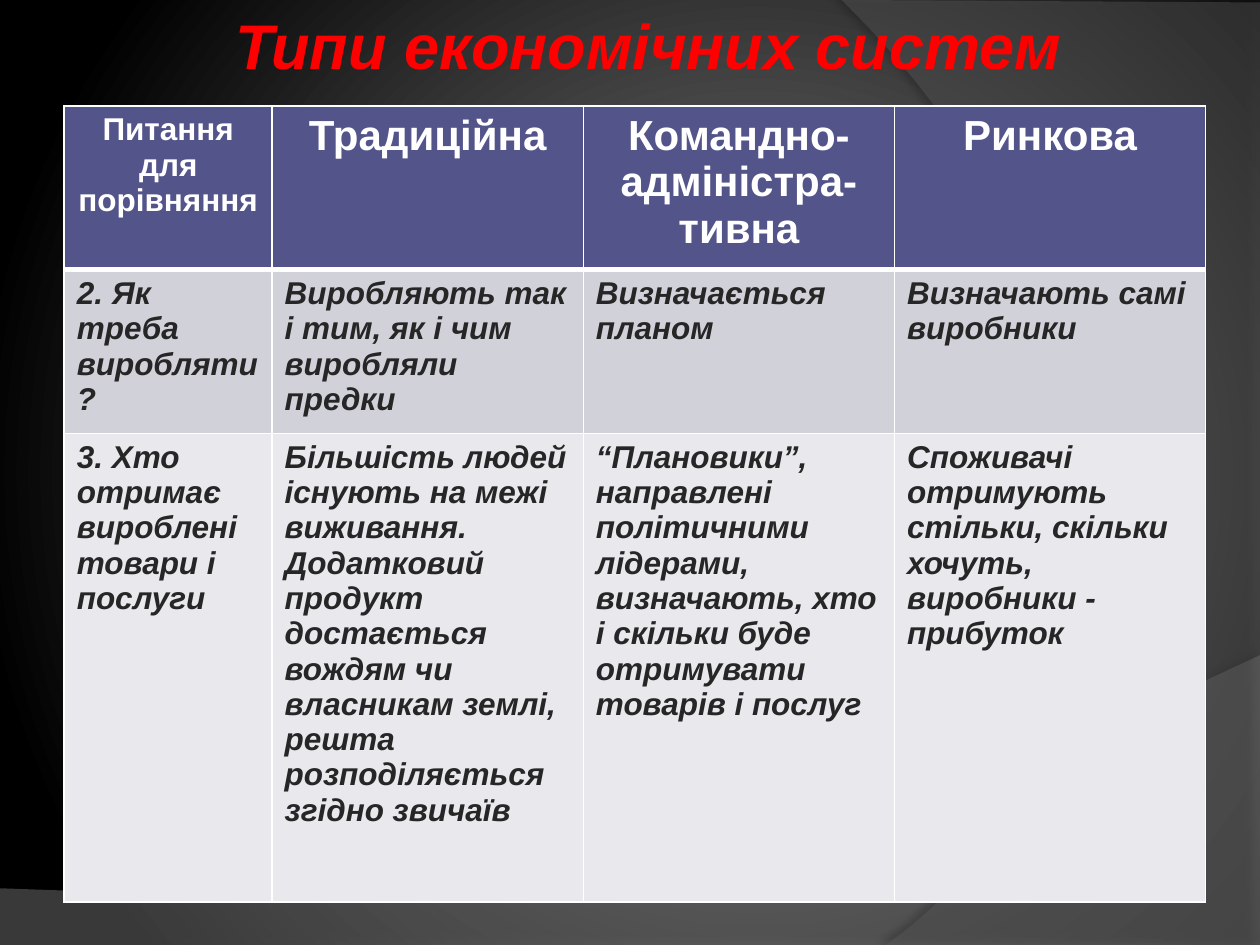
from lxml import etree
from pptx import Presentation
from pptx.dml.color import RGBColor
from pptx.enum import text
from pptx.oxml import parse_xml
from pptx.oxml.ns import nsdecls, qn
from pptx.util import Inches, Pt

COLORS = {
    "glow": "848484", "edge": "000000", "wave": "7F7F7F", "arc": "5E5E5E",
    "title": "FF0000", "head": "53548A", "odd": "D1D1DA", "even": "E9E9ED",
    "white": "FFFFFF", "ink": "262626",
}
TITLE = "Типи економічних систем"
HEADS = ["Питання для порівняння", "Традиційна",
         "Командно-адміністра-тивна", "Ринкова"]
ROWS = [
    ["2. Як треба виробляти?",
     "Виробляють так і тим, як і чим виробляли предки",
     "Визначається планом",
     "Визначають самі виробники"],
    ["3. Хто отримає вироблені товари і послуги",
     "Більшість людей існують на межі виживання. Додатковий продукт "
     "достається вождям чи власникам землі, решта розподіляється "
     "згідно звичаїв",
     "“Плановики”, направлені політичними лідерами, визначають, "
     "хто і скільки буде отримувати товарів і послуг",
     "Споживачі отримують стільки, скільки хочуть, виробники - прибуток"],
]
WIDTHS = [1.65, 2.47, 2.47, 2.47]
HEIGHTS = [1.29, 1.29, 3.72]

# Each swoosh: lines before the curve, curve (four points), lines after it,
# colour, opacity, then shadow opacity, blur, distance and angle.
SWOOSHES = [
    ([(0, 7.05), (0, 7.5), (10, 7.5)],
     [(10, 5.2), (5.59, 7.29), (3.91, 7.19), (0, 7.05)], [],
     "wave", 45, (35, 4, 3.5, 270)),
    ([(10, 0.02), (10, 7.5)],
     [(7.03, 7.5), (8.91, 6.19), (9.47, 2.75), (6.68, 0)], [(10, 0.02)],
     "arc", 40, (45, 4, 4, 180)),
]


def rgb(name):
    return RGBColor.from_string(COLORS[name])


def bezier(pts, steps=40):
    for i in range(steps + 1):
        t = i / steps
        w = ((1 - t) ** 3, 3 * t * (1 - t) ** 2, 3 * t * t * (1 - t), t ** 3)
        yield tuple(sum(k * p[a] for k, p in zip(w, pts)) for a in (0, 1))


def backdrop(slide):
    """Radial glow centred right of the middle."""
    fill = slide.background.fill
    fill.gradient()
    for stop, name, pos in zip(fill.gradient_stops, ("glow", "edge"), (0, 1)):
        stop.color.rgb = rgb(name)
        stop.position = pos
    grad = slide.element.find(".//" + qn("a:gradFill"))
    grad.replace(grad.find(qn("a:lin")), parse_xml(
        f'<a:path {nsdecls("a")} path="circle"><a:fillToRect l="60000" '
        't="50000" r="40000" b="50000"/></a:path>'))


def swoosh(slide, before, curve, after, color, alpha, shadow):
    pts = [(Inches(x), Inches(y)) for x, y in
           before + list(bezier(curve)) + after]
    form = slide.shapes.build_freeform(*pts[0])
    form.add_line_segments(pts[1:], close=True)
    shape = form.convert_to_shape()
    shape.line.fill.background()
    shape.fill.solid()
    shape.fill.fore_color.rgb = rgb(color)
    props = shape.element.spPr
    etree.SubElement(props.find(".//" + qn("a:srgbClr")), qn("a:alpha"),
                     val=str(alpha * 1000))
    dim, blur, dist, angle = shadow
    props.append(parse_xml(
        f'<a:effectLst {nsdecls("a")}><a:outerShdw blurRad="{Pt(blur)}" '
        f'dist="{Pt(dist)}" dir="{angle * 60000}" rotWithShape="0">'
        f'<a:srgbClr val="{COLORS["edge"]}"><a:alpha val="{dim * 1000}"/>'
        '</a:srgbClr></a:outerShdw></a:effectLst>'))


def style(par, size, color, italic):
    for run in par.runs:
        font = run.font
        font.name, font.size = "Arial", Pt(size)
        font.bold, font.italic = True, italic
        font.color.rgb = rgb(color)


def border(cell, top, bottom):
    props = cell._tc.get_or_add_tcPr()
    for i, (side, wide) in enumerate(zip("LRTB", (1, 1, top, bottom))):
        props.insert(i, parse_xml(
            f'<a:ln{side} {nsdecls("a")} w="{Pt(wide)}"><a:solidFill>'
            f'<a:srgbClr val="{COLORS["white"]}"/></a:solidFill></a:ln{side}>'))


def grid(slide):
    table = slide.shapes.add_table(
        len(HEIGHTS), len(WIDTHS), Inches(0.51), Inches(0.84),
        Inches(sum(WIDTHS)), Inches(sum(HEIGHTS))).table
    for col, wide in zip(table.columns, WIDTHS):
        col.width = Inches(wide)
    for row, high in zip(table.rows, HEIGHTS):
        row.height = Inches(high)
    fills = ("head", "odd", "even")
    for r, words in enumerate([HEADS] + ROWS):
        head = r == 0
        for c, word in enumerate(words):
            cell = table.cell(r, c)
            cell.text_frame.text = word
            cell.fill.solid()
            cell.fill.fore_color.rgb = rgb(fills[r])
            border(cell, 3 if r == 1 else 1, 3 if head else 1)
            par = cell.text_frame.paragraphs[0]
            if head:
                par.alignment = text.PP_ALIGN.CENTER
            style(par, 24 if head and c else 18,
                  "white" if head else "ink", not head)


def main():
    deck = Presentation()
    deck.slide_width, deck.slide_height = Inches(10), Inches(7.5)
    slide = deck.slides.add_slide(deck.slide_layouts[6])
    backdrop(slide)
    for item in SWOOSHES:
        swoosh(slide, *item)
    title = slide.shapes.add_textbox(
        Inches(1.77), Inches(0), Inches(6.82), Inches(0.71)).text_frame
    title.text = TITLE
    title.word_wrap = False
    title.auto_size = text.MSO_AUTO_SIZE.SHAPE_TO_FIT_TEXT
    style(title.paragraphs[0], 36, "title", True)
    grid(slide)
    deck.save("out.pptx")


if __name__ == "__main__":
    main()
